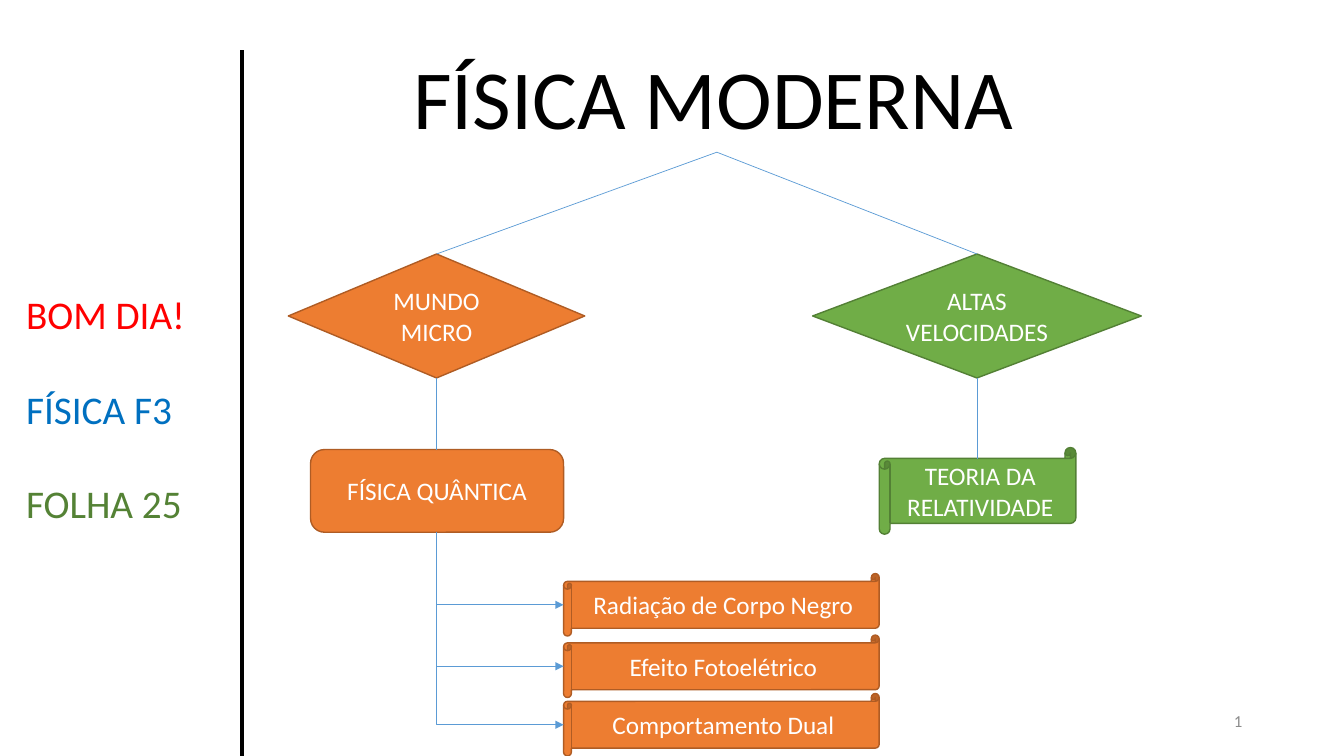
from pptx import Presentation
from pptx.dml.color import RGBColor
from pptx.enum.shapes import MSO_CONNECTOR as Link, MSO_SHAPE as Form
from pptx.enum.text import MSO_ANCHOR as Anchor, PP_ALIGN as Align
from pptx.oxml.ns import qn
from pptx.util import Inches, Pt
from lxml import etree

HUES = {
    "black": "000000", "white": "FFFFFF", "gray": "8C8C8C",
    "red": "FF0000", "navy": "0070C0", "leaf": "548235",
    "blue": "5B9BD5", "orange": "ED7D31", "rust": "AF5C24",
    "green": "70AD47", "moss": "538035",
}
EDGES = {"orange": "rust", "green": "moss"}


def hue(name):
    return RGBColor.from_string(HUES[name])


def apply(item, **values):
    for key, value in values.items():
        setattr(item, key, value)


def write(para, text, size, color, align=Align.LEFT):
    para.alignment = align
    run = para.add_run()
    run.text = text
    apply(run.font, name="Calibri", size=Pt(size))
    run.font.color.rgb = hue(color)


def label(slide, box, lines, size, align=Align.LEFT, gap=0, anchor=Anchor.TOP):
    """Place a text box with one paragraph per (text, color) pair."""
    frame = slide.shapes.add_textbox(*map(Inches, box)).text_frame
    apply(frame, word_wrap=True, vertical_anchor=anchor)
    for i, (text, color) in enumerate(lines):
        para = frame.add_paragraph() if i else frame.paragraphs[0]
        para.space_before = Pt(gap if i else 0)
        write(para, text, size, color, align)


def node(slide, form, box, text, color):
    shape = slide.shapes.add_shape(form, *map(Inches, box))
    shape.shadow.inherit = False
    shape.fill.solid()
    shape.fill.fore_color.rgb = hue(color)
    shape.line.color.rgb = hue(EDGES[color])
    shape.line.width = Pt(1)
    apply(shape.text_frame, word_wrap=True, vertical_anchor=Anchor.MIDDLE)
    write(shape.text_frame.paragraphs[0], text, 18, "white", Align.CENTER)


def line(slide, start, end, color="blue", width=0.5, kind=Link.STRAIGHT):
    link = slide.shapes.add_connector(kind, *map(Inches, (*start, *end)))
    link.line.color.rgb = hue(color)
    link.line.width = Pt(width)
    etree.SubElement(link.element.spPr, qn("a:effectLst"))
    return link


def elbow(slide, start, end):
    """Draw an arrow that runs down from start, then right to end."""
    (x1, y1), (x2, y2) = start, end
    midx, midy = (x1 + x2) / 2, (y1 + y2) / 2
    dx, dy = (x2 - x1) / 2, (y2 - y1) / 2
    # The box is turned a quarter, so its width and height swap.
    link = line(slide, (midx + dy, midy - dx), (midx - dy, midy + dx),
                kind=Link.ELBOW)
    props = link.element.spPr
    props.find(qn("a:xfrm")).set("rot", "16200000")
    props.find(qn("a:prstGeom")).set("prst", "bentConnector2")
    etree.SubElement(props.find(qn("a:ln")), qn("a:tailEnd"), type="triangle")


def sidebar(slide, box):
    left, top, wide, high = box
    line(slide, (left + wide, top), (left + wide, top + high), "black", 3)
    lines = [("BOM DIA!", "red"), ("FÍSICA F3", "navy"), ("FOLHA 25", "leaf")]
    label(slide, (left + 0.16, top + 2.33, 2.35, 2.46), lines, 28, gap=34)


def micro(slide, box, root):
    left, top, wide, high = box
    mid = left + wide / 2
    node(slide, Form.DIAMOND, (left, top, wide, 1.23), "MUNDO MICRO", "orange")
    node(slide, Form.ROUNDED_RECTANGLE, (mid - 1.25, top + 1.94, 2.51, 0.82),
         "FÍSICA QUÂNTICA", "orange")
    line(slide, root, (mid, top))
    line(slide, (mid, top + 1.23), (mid, top + 1.94))
    topics = [("Radiação de Corpo Negro", 3.17), ("Efeito Fotoelétrico", 3.78),
              ("Comportamento Dual", 4.36)]
    for text, drop in topics:
        spot = (mid + 1.26, top + drop)
        node(slide, Form.HORIZONTAL_SCROLL, (*spot, 3.13, 0.62), text, "orange")
        elbow(slide, (mid, top + 2.76), (spot[0], spot[1] + 0.31))


def speed(slide, box, root):
    left, top, wide, high = box
    mid = left + wide / 2
    node(slide, Form.DIAMOND, (left, top, wide, 1.23), "ALTAS VELOCIDADES", "green")
    node(slide, Form.HORIZONTAL_SCROLL, (mid - 0.97, top + 1.92, 1.95, 0.86),
         "TEORIA DA RELATIVIDADE", "green")
    line(slide, root, (mid, top))
    line(slide, (mid, top + 1.23), (mid, top + 2.03))


def main():
    deck = Presentation()
    apply(deck, slide_width=Inches(13.33), slide_height=Inches(7.5))
    slide = deck.slides.add_slide(deck.slide_layouts[6])
    root = (7.11, 1.51)
    sidebar(slide, (0, 0.5, 2.4, 7))
    label(slide, (4, 0.4, 6.23, 1.11), [("FÍSICA MODERNA", "black")], 60)
    micro(slide, (2.86, 2.52, 2.94, 4.98), root)
    speed(slide, (8.06, 2.52, 3.26, 2.78), root)
    label(slide, (12.06, 6.95, 0.36, 0.4), [("1", "gray")], 12,
          Align.RIGHT, anchor=Anchor.MIDDLE)
    deck.save("out.pptx")


if __name__ == "__main__":
    main()
